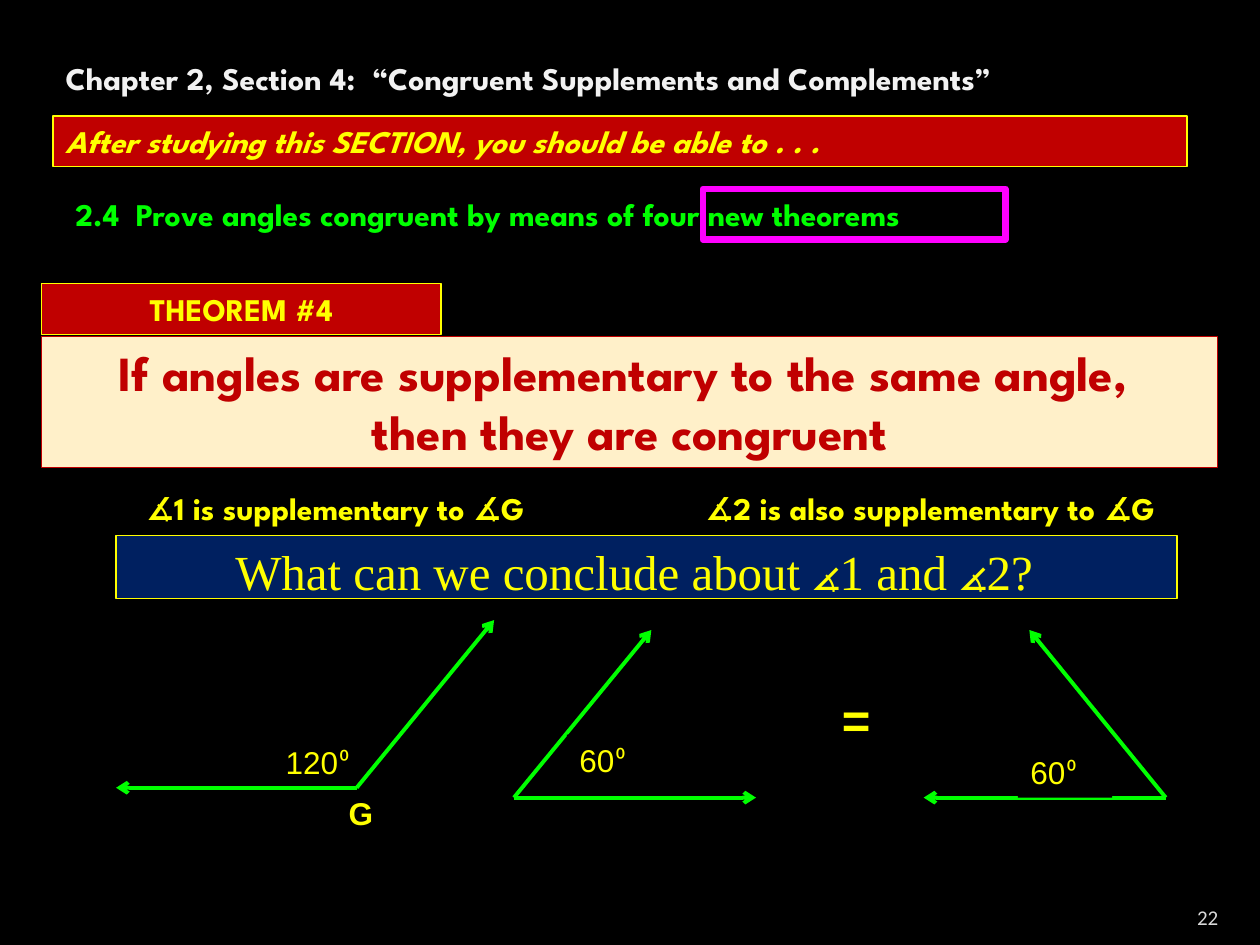
"""Build the slide on the theorem of congruent supplements."""
import pptx
import pptx.dml.color
import pptx.enum.shapes
import pptx.enum.text
import pptx.oxml
import pptx.oxml.ns
import pptx.util
from pptx.util import Cm

RGBColor = pptx.dml.color.RGBColor
BLACK = RGBColor(0x00, 0x00, 0x00)
YELLOW = RGBColor(0xFF, 0xFF, 0x00)
GREEN = RGBColor(0x00, 0xFF, 0x00)
RED = RGBColor(0xC0, 0x00, 0x00)
CREAM = RGBColor(0xFF, 0xF0, 0xC9)
NAVY = RGBColor(0x00, 0x20, 0x60)
MAGENTA = RGBColor(0xFF, 0x00, 0xFF)
WHITE = RGBColor(0xF2, 0xF2, 0xF2)
GREY = RGBColor(0xD9, 0xD9, 0xD9)

ALIGN = pptx.enum.text.PP_ALIGN
ANCHOR = pptx.enum.text.MSO_ANCHOR
RECTANGLE = pptx.enum.shapes.MSO_SHAPE.RECTANGLE
STRAIGHT = pptx.enum.shapes.MSO_CONNECTOR.STRAIGHT
HEADING = "League Spartan"


def write(box, text, font=HEADING, size=18, color=YELLOW, bold=True,
          italic=False, align=ALIGN.LEFT, anchor=ANCHOR.TOP):
    frame = box.text_frame
    frame.word_wrap = True
    frame.auto_size = pptx.enum.text.MSO_AUTO_SIZE.NONE
    frame.vertical_anchor = anchor
    for index, line in enumerate(text.split("\n")):
        para = frame.add_paragraph() if index else frame.paragraphs[0]
        para.alignment = align
        number, degree, _ = line.partition("⁰")
        for part, face in ((number, font), (degree, "Calibri")):
            if part:
                span = para.add_run()
                span.text = part
                span.font.name = face
                span.font.size = pptx.util.Pt(size)
                span.font.bold = bold
                span.font.italic = italic
                span.font.color.rgb = color


def add_rectangle(left, top, width, height, fill=None, line=None, weight=0.75):
    box = page.shapes.add_shape(RECTANGLE, Cm(left), Cm(top), Cm(width), Cm(height))
    box.shadow.inherit = False
    for paint, color in ((box.fill, fill), (box.line.fill, line)):
        if color is None:
            paint.background()
        else:
            paint.solid()
            paint.fore_color.rgb = color
    if line is not None:
        box.line.width = pptx.util.Pt(weight)
    return box


deck = pptx.Presentation()
deck.slide_width, deck.slide_height = Cm(25.4), Cm(19.05)
page = deck.slides.add_slide(deck.slide_layouts[5])
page.background.fill.solid()
page.background.fill.fore_color.rgb = BLACK

title = page.shapes.title
title.left, title.top, title.width, title.height = Cm(1.07), Cm(1.07), Cm(22.86), Cm(1.02)
write(title, "Chapter 2, Section 4:  “Congruent Supplements and Complements”", color=WHITE)

theorem_label = add_rectangle(0.84, 5.72, 8.05, 1.02, RED, YELLOW)
write(theorem_label, "THEOREM #4", align=ALIGN.CENTER)
goal_banner = add_rectangle(1.07, 2.34, 22.86, 1.02, RED, YELLOW)
write(goal_banner, "After studying this SECTION, you should be able to . . .", italic=True)
theorem = add_rectangle(0.84, 6.78, 23.7, 2.64, CREAM, RED)
write(theorem, "If angles are supplementary to the same angle, \nthen they are congruent",
      size=28, color=RED, align=ALIGN.CENTER)
question = add_rectangle(2.34, 10.8, 21.39, 1.27, NAVY, YELLOW)
question.text_frame.margin_right = Cm(0.75)
write(question, "What can we conclude about ∡1 and ∡2?", font="Times New Roman",
      size=28, bold=False, align=ALIGN.CENTER)

angles = [
    ((7.19, 15.88), (9.96, 12.5), (2.34, 15.88)),
    ((10.36, 16.08), (13.13, 12.7), (15.24, 16.08)),
    ((23.5, 16.08), (20.75, 12.7), (18.62, 16.08)),
]
for vertex, *tips in angles:
    angle = page.shapes.add_group_shape()
    for tip in tips:
        ray = angle.shapes.add_connector(STRAIGHT, *map(Cm, vertex + tip))
        ray.line.color.rgb = GREEN
        ray.line.width = pptx.util.Pt(2.25)
        arrow = pptx.oxml.parse_xml(
            f'<a:tailEnd {pptx.oxml.ns.nsdecls("a")} type="arrow"/>')
        ray.line._get_or_add_ln().append(arrow)
        effects = pptx.oxml.parse_xml(f'<a:effectLst {pptx.oxml.ns.nsdecls("a")}/>')
        ray._element.spPr.append(effects)

measure = {"font": "Arial", "bold": False}
labels = [
    ("2.4  Prove angles congruent by means of four new theorems",
     1.27, 3.81, 22.86, 1.02, {"color": GREEN}),
    ("∡1 is supplementary to ∡G", 2.11, 9.73, 9.3, 1.02, {"align": ALIGN.CENTER}),
    ("∡2 is also supplementary to ∡G", 13.97, 9.73, 10.16, 1.02, {}),
    ("120⁰", 5.51, 14.86, 1.9, 1.02, measure),
    ("G", 6.78, 15.88, 1.9, 1.02, {"font": "Arial"}),
    ("22", 22.78, 17.98, 2.03, 0.76,
     {"font": "Calibri", "size": 12, "color": GREY, "bold": False,
      "align": ALIGN.RIGHT, "anchor": ANCHOR.BOTTOM}),
]
for text, left, top, width, height, style in labels:
    box = page.shapes.add_textbox(Cm(left), Cm(top), Cm(width), Cm(height))
    write(box, text, **style)
    if text == "22":
        box.text_frame.margin_bottom = 0

add_rectangle(14.17, 3.81, 6.1, 1.02, line=MAGENTA, weight=3.78)
for left, top in ((11.43, 14.81), (20.52, 15.06)):
    write(add_rectangle(left, top, 1.9, 1.02, BLACK), "60⁰", **measure)
equals = add_rectangle(16.31, 13.77, 1.9, 1.45, BLACK)
write(equals, "=", font="Arial", size=28, align=ALIGN.CENTER)

deck.save("out.pptx")
